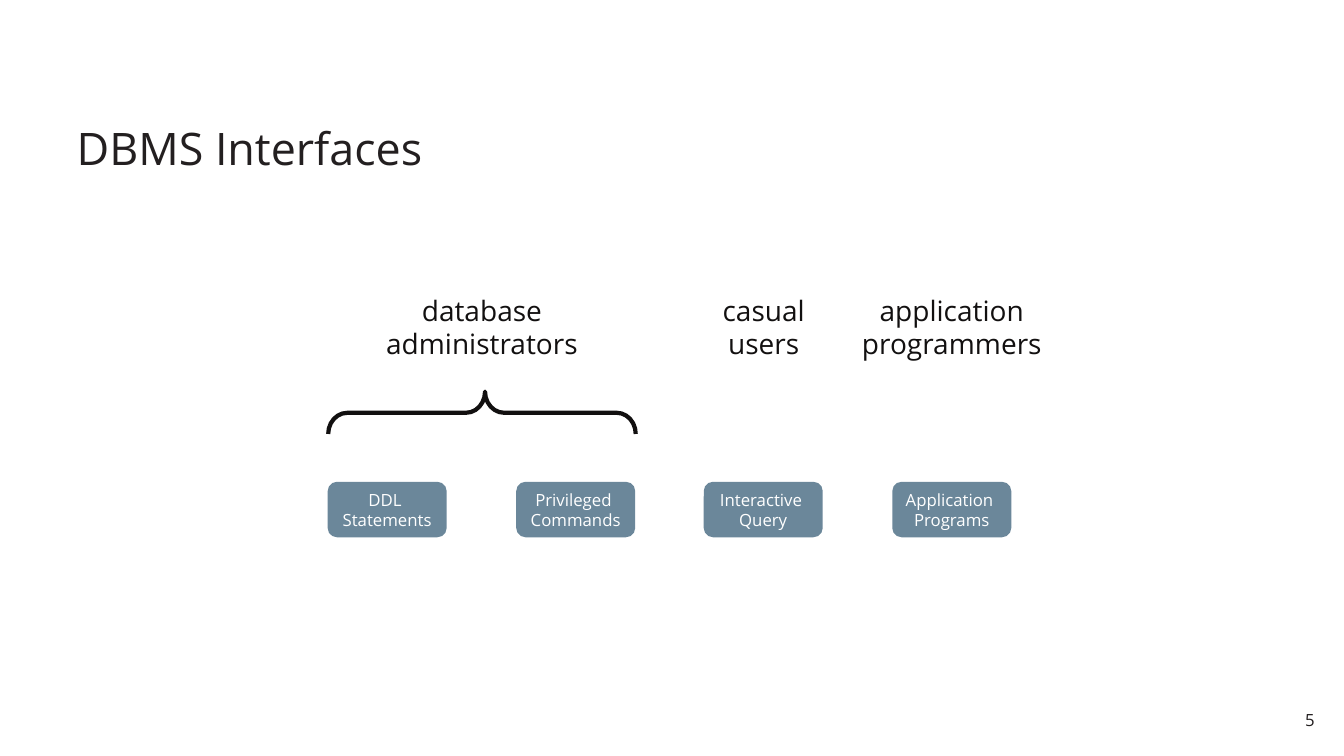
import dataclasses

import pptx
import pptx.dml.color
import pptx.enum.shapes
import pptx.enum.text
import pptx.util

PX = 9144  # EMU in one px, at 100 px to the inch
FONT = "Open Sans"
HUES = {"dark": "231F20", "ink": "121010", "box": "6B879A", "white": "FFFFFF"}
ALIGN = pptx.enum.text.PP_ALIGN
ANCHOR = pptx.enum.text.MSO_ANCHOR
FIT = pptx.enum.text.MSO_AUTO_SIZE
SHAPE = pptx.enum.shapes.MSO_SHAPE


@dataclasses.dataclass
class Area:
    x: int
    y: int
    w: int
    h: int

    def emu(self) -> list[int]:
        return [side * PX for side in (self.x, self.y, self.w, self.h)]


@dataclasses.dataclass
class Label:
    text: str
    x: int
    w: int


USERS = [
    Label("database\nadministrators", 369, 218),
    Label("casual\nusers", 705, 105),
    Label("application\nprogrammers", 842, 204),
]
TOOLS = ["DDL \nStatements", "Privileged \nCommands", "Interactive \nQuery", "Application \nPrograms"]


def color(name: str) -> pptx.dml.color.RGBColor:
    return pptx.dml.color.RGBColor.from_string(HUES[name])


def write(frame, text: str, *, size: int, hue: str, align=ALIGN.CENTER, anchor=ANCHOR.TOP,
          pad: tuple[int, int] = (10, 5), wrap: bool = False, fit=FIT.NONE, space: float = 1.0) -> None:
    frame.text = text
    frame.word_wrap = wrap
    frame.auto_size = fit
    frame.vertical_anchor = anchor
    frame.margin_left = frame.margin_right = pad[0] * PX
    frame.margin_top = frame.margin_bottom = pad[1] * PX
    for para in frame.paragraphs:
        para.alignment = align
        para.line_spacing = space
        for run in para.runs:
            run.font.name = FONT
            run.font.size = pptx.util.Pt(size)
            run.font.color.rgb = color(hue)


def add_label(slide, label: Label) -> None:
    box = slide.shapes.add_textbox(*Area(label.x, 286, label.w, 77).emu())
    write(box.text_frame, label.text, size=20, hue="ink", fit=FIT.SHAPE_TO_FIT_TEXT)


def add_tool(slide, text: str, area: Area) -> None:
    box = slide.shapes.add_shape(SHAPE.ROUNDED_RECTANGLE, *area.emu())
    box.shadow.inherit = False
    box.fill.solid()
    box.fill.fore_color.rgb = color("box")
    box.line.fill.background()
    write(box.text_frame, text, size=12, hue="white", anchor=ANCHOR.MIDDLE, pad=(10, 0))


def add_brace(slide, area: Area) -> None:
    brace = slide.shapes.add_shape(SHAPE.LEFT_BRACE, *area.emu())
    brace.rotation = 90
    brace.adjustments[0] = 0.45
    brace.adjustments[1] = 0.49
    brace.shadow.inherit = False
    brace.fill.background()
    brace.line.color.rgb = color("ink")
    brace.line.width = pptx.util.Pt(3)


def main() -> None:
    deck = pptx.Presentation()
    deck.slide_width, deck.slide_height = 1333 * PX, 750 * PX
    slide = deck.slides.add_slide(deck.slide_layouts[5])

    # Title
    title = slide.shapes.title
    title.left, title.top, title.width, title.height = Area(68, 76, 1197, 102).emu()
    write(title.text_frame, "DBMS Interfaces", size=32, hue="dark", align=ALIGN.LEFT,
          anchor=ANCHOR.BOTTOM, pad=(8, 4), wrap=True, space=0.9)

    # User groups
    for label in USERS:
        add_label(slide, label)

    # Interfaces, evenly spaced in one row
    for i, text in enumerate(TOOLS):
        add_tool(slide, text, Area(325 + round(i * 560 / 3), 478, 118, 55))

    # Brace over the administrators' two interfaces
    add_brace(slide, Area(457, 257, 42, 305))

    # Page number
    page = slide.shapes.add_textbox(*Area(1265, 698, 47, 31).emu())
    write(page.text_frame, "5", size=12, hue="dark", align=ALIGN.RIGHT, pad=(8, 6), wrap=True)

    deck.save("out.pptx")


if __name__ == "__main__":
    main()
